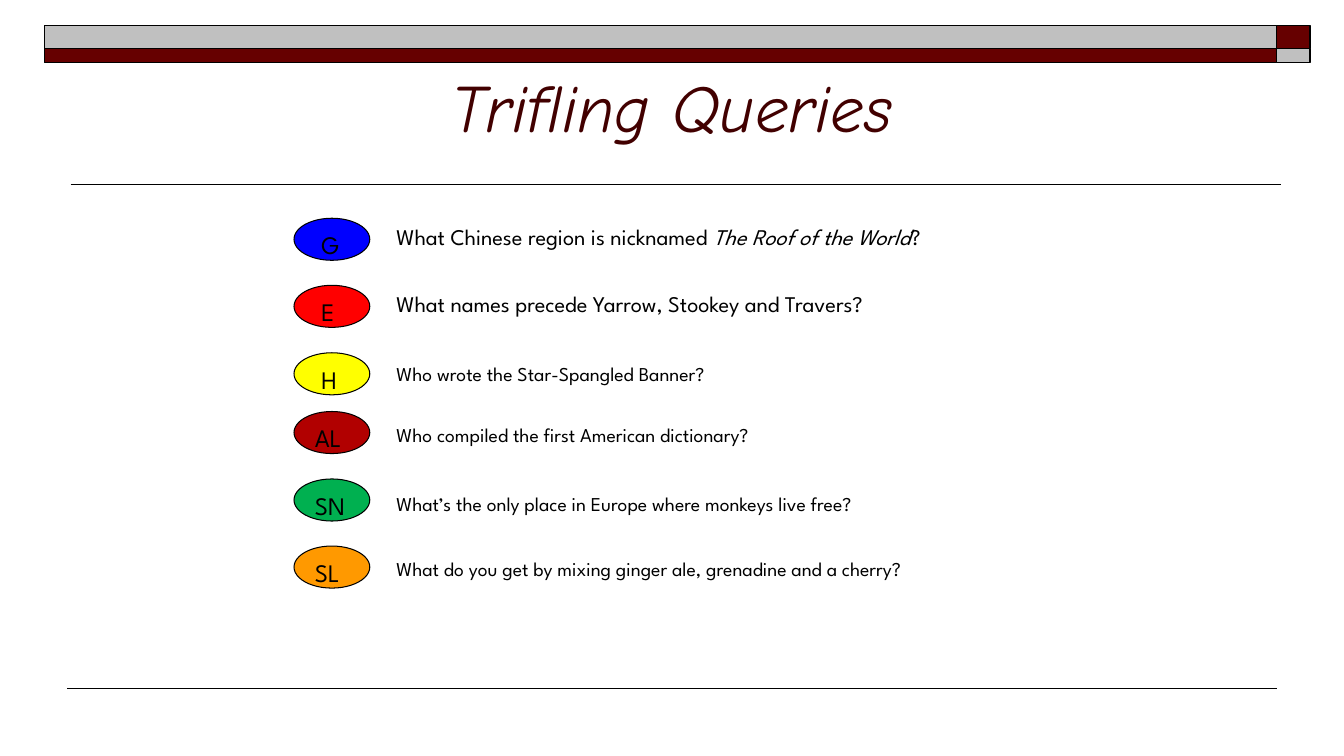
from dataclasses import dataclass
from lxml.etree import SubElement
from pptx import Presentation
from pptx.dml.color import RGBColor
from pptx.enum.shapes import MSO_CONNECTOR, MSO_SHAPE
from pptx.enum.text import MSO_ANCHOR, MSO_AUTO_SIZE, PP_ALIGN
from pptx.oxml.ns import qn
from pptx.shapes.autoshape import Shape
from pptx.slide import Slide
from pptx.text.text import Font
from pptx.util import Cm, Pt

COLORS = {
    "black": "000000", "maroon": "660000", "silver": "C0C0C0", "title": "420000",
    "blue": "0000FF", "red": "FF0000", "yellow": "FFFF00",
    "brown": "B10000", "green": "00B050", "orange": "FF9900",
}
TITLE_FONT = "Comic Neue"
TEXT_FONT = "League Spartan"
SINGLE_LETTER_INDENT = 0.16


@dataclass(frozen=True)
class Band:
    left: float
    top: float
    width: float
    height: float
    color: str


@dataclass(frozen=True)
class Rule:
    left: float
    right: float
    y: float
    weight: float


@dataclass(frozen=True)
class Question:
    category: str
    color: str
    badge_top: float
    text_top: float
    size: int
    wording: tuple[str, ...]  # every second part is italic


BANDS = [
    Band(32.17, 0.64, 0.85, 0.58, "maroon"),
    Band(1.12, 0.64, 31.05, 0.58, "silver"),
    Band(1.12, 1.22, 31.05, 0.36, "maroon"),
    Band(32.17, 1.22, 0.85, 0.36, "silver"),
]
RULES = [Rule(1.78, 32.28, 4.65, 1), Rule(1.69, 32.17, 17.36, 0.75)]
QUESTIONS = [
    Question("G", "blue", 5.5, 5.5, 16,
             ("What Chinese region is nicknamed ", "The Roof of the World", "?")),
    Question("E", "red", 7.19, 7.19, 16,
             ("What names precede Yarrow, Stookey and Travers?",)),
    Question("H", "yellow", 8.89, 9, 14, ("Who wrote the Star-Spangled Banner?",)),
    Question("AL", "brown", 10.37, 10.54, 14,
             ("Who compiled the first American dictionary?",)),
    Question("SN", "green", 12.07, 12.28, 14,
             ("What’s the only place in Europe where monkeys live free?",)),
    Question("SL", "orange", 13.76, 13.91, 14,
             ("What do you get by mixing ginger ale, grenadine and a cherry?",)),
]


def rgb(name: str) -> RGBColor:
    return RGBColor.from_string(COLORS[name])


def set_font(font: Font, name: str, size: float, color: str, italic: bool = False) -> None:
    font.name = name
    font.size = Pt(size)
    font.color.rgb = rgb(color)
    font.italic = italic


def outline_and_fill(shape: Shape, fill: str, weight: float) -> None:
    shape.shadow.inherit = False
    shape.fill.solid()
    shape.fill.fore_color.rgb = rgb(fill)
    shape.line.color.rgb = rgb("black")
    shape.line.width = Pt(weight)


def draw_band(slide: Slide, band: Band) -> None:
    bar = slide.shapes.add_shape(MSO_SHAPE.RECTANGLE, Cm(band.left), Cm(band.top),
                                 Cm(band.width), Cm(band.height))
    outline_and_fill(bar, band.color, 1)


def draw_rule(slide: Slide, rule: Rule) -> None:
    line = slide.shapes.add_connector(MSO_CONNECTOR.STRAIGHT, Cm(rule.left), Cm(rule.y),
                                      Cm(rule.right), Cm(rule.y))
    line.line.color.rgb = rgb("black")
    line.line.width = Pt(rule.weight)
    SubElement(line.element.spPr, qn("a:effectLst"))


def draw_title(slide: Slide, wording: str) -> None:
    title = slide.shapes.title
    title.left, title.top, title.width, title.height = Cm(5.5), Cm(0.64), Cm(22.86), Cm(3.17)
    frame = title.text_frame
    frame.text = wording
    frame.auto_size = MSO_AUTO_SIZE.NONE
    frame.vertical_anchor = MSO_ANCHOR.BOTTOM
    heading = frame.paragraphs[0]
    heading.alignment = PP_ALIGN.CENTER
    set_font(heading.runs[0].font, TITLE_FONT, 48, "title", italic=True)


def draw_badge(slide: Slide, question: Question) -> None:
    badge = slide.shapes.add_shape(MSO_SHAPE.OVAL, Cm(7.41), Cm(question.badge_top),
                                   Cm(1.91), Cm(1.06))
    outline_and_fill(badge, question.color, 0.75)
    frame = badge.text_frame
    frame.text = question.category
    frame.vertical_anchor = MSO_ANCHOR.TOP
    indent = SINGLE_LETTER_INDENT if len(question.category) == 1 else 0
    frame.margin_left = Cm(0.25 + indent)
    frame.margin_right = 0
    letters = frame.paragraphs[0]
    letters.alignment = PP_ALIGN.LEFT
    set_font(letters.runs[0].font, TEXT_FONT, 18, "black")


def draw_wording(slide: Slide, question: Question) -> None:
    box = slide.shapes.add_textbox(Cm(9.74), Cm(question.text_top), Cm(18), Cm(0.9))
    frame = box.text_frame
    frame.word_wrap = True
    frame.auto_size = MSO_AUTO_SIZE.SHAPE_TO_FIT_TEXT
    for index, part in enumerate(question.wording):
        run = frame.paragraphs[0].add_run()
        run.text = part
        set_font(run.font, TEXT_FONT, question.size, "black", italic=index % 2 == 1)


def main() -> None:
    deck = Presentation()
    deck.slide_width, deck.slide_height = Cm(33.87), Cm(19.05)
    slide = deck.slides.add_slide(deck.slide_layouts.get_by_name("Title Only"))
    for band in BANDS:
        draw_band(slide, band)
    for rule in RULES:
        draw_rule(slide, rule)
    draw_title(slide, "Trifling Queries")
    for question in QUESTIONS:
        draw_badge(slide, question)
        draw_wording(slide, question)
    deck.save("out.pptx")


if __name__ == "__main__":
    main()
